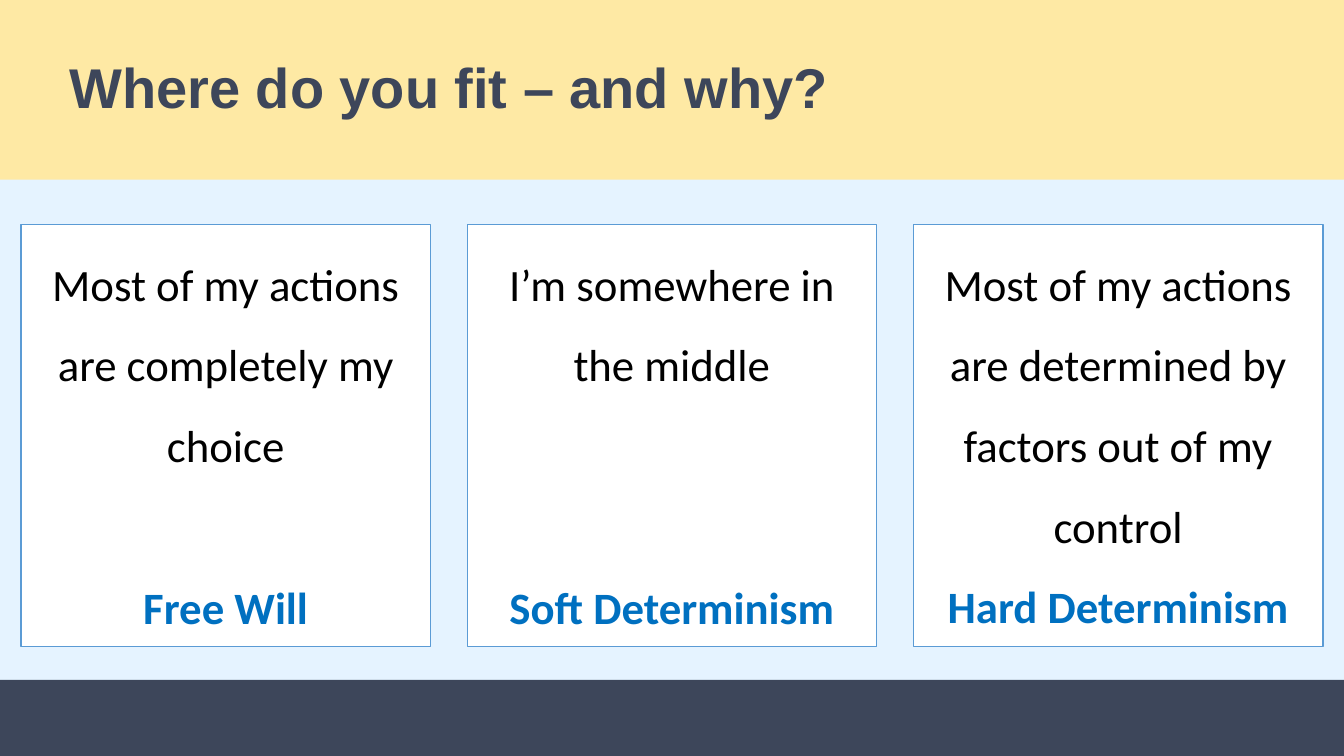
import pptx
import pptx.util
import pptx.dml.color
import pptx.enum.shapes
import pptx.enum.text

Cm, Pt = pptx.util.Cm, pptx.util.Pt
ALIGN = pptx.enum.text.PP_ALIGN
ANCHOR = pptx.enum.text.MSO_ANCHOR
RECT = pptx.enum.shapes.MSO_SHAPE.RECTANGLE

# Content: statement, position it stands for, spare lines between the two
TITLE = "Where do you fit – and why?"
CARDS = [
    ("Most of my actions are completely my choice", "Free Will", 1),
    ("I’m somewhere in the middle", "Soft Determinism", 2),
    ("Most of my actions are determined by factors out of my control",
     "Hard Determinism", 0),
]

# Layout in centimetres
SLIDE_W, SLIDE_H = 33.87, 19.05
TITLE_H, FOOTER_TOP = 4.53, 17.13
CARD_LEFT, CARD_TOP, CARD_W, CARD_H = 0.53, 5.66, 10.32, 10.64
CARD_STEP = (SLIDE_W - 2 * CARD_LEFT - CARD_W) / (len(CARDS) - 1)
LINE_PT = 58  # height of one card line at 32 pt and 1.5 spacing

NAVY, YELLOW, PALE = "3D465A", "FEE9A4", "E5F3FF"
WHITE, BLACK, OUTLINE, BLUE = "FFFFFF", "000000", "5B9BD5", "0070C0"


def paint(fmt, color):
    fmt.solid()
    fmt.fore_color.rgb = pptx.dml.color.RGBColor.from_string(color)


def add_rect(left, top, width, height, fill, line=None):
    sp = slide.shapes.add_shape(RECT, Cm(left), Cm(top), Cm(width), Cm(height))
    sp.shadow.inherit = False
    paint(sp.fill, fill)
    if line:
        paint(sp.line.fill, line)
        sp.line.width = Pt(1)
    else:
        sp.line.fill.background()
    return sp


def add_run(p, text, size, font, color, bold=False):
    r = p.add_run()
    r.text = text
    r.font.size, r.font.name, r.font.bold = Pt(size), font, bold
    paint(r.font.fill, color)


prs = pptx.Presentation()
prs.slide_width, prs.slide_height = Cm(SLIDE_W), Cm(SLIDE_H)
slide = prs.slides.add_slide(prs.slide_layouts[5])
paint(slide.background.fill, PALE)

# Footer band
add_rect(0, FOOTER_TOP, SLIDE_W, SLIDE_H - FOOTER_TOP, NAVY)

# Title band
title = slide.shapes.title
title.left, title.top = Cm(0), Cm(0)
title.width, title.height = Cm(SLIDE_W), Cm(TITLE_H)
paint(title.fill, YELLOW)
tf = title.text_frame
tf.word_wrap = True
tf.auto_size = pptx.enum.text.MSO_AUTO_SIZE.NONE
tf.vertical_anchor = ANCHOR.MIDDLE
tf.margin_left = Cm(1.75)
p = tf.paragraphs[0]
p.alignment, p.line_spacing = ALIGN.LEFT, 0.9
add_run(p, TITLE, 40, "Arial", NAVY, True)

# Cards
for i, (statement, position, spare) in enumerate(CARDS):
    sp = add_rect(CARD_LEFT + i * CARD_STEP, CARD_TOP, CARD_W, CARD_H,
                  WHITE, OUTLINE)
    tf = sp.text_frame
    tf.word_wrap = True
    tf.vertical_anchor = ANCHOR.TOP
    for p, text, color, bold, before in (
            (tf.paragraphs[0], statement, BLACK, False, 0),
            (tf.add_paragraph(), position, BLUE, True, spare * LINE_PT)):
        p.alignment, p.line_spacing = ALIGN.CENTER, 1.5
        p.space_before = Pt(before)
        add_run(p, text, 32, "Calibri", color, bold)

prs.save("out.pptx")
